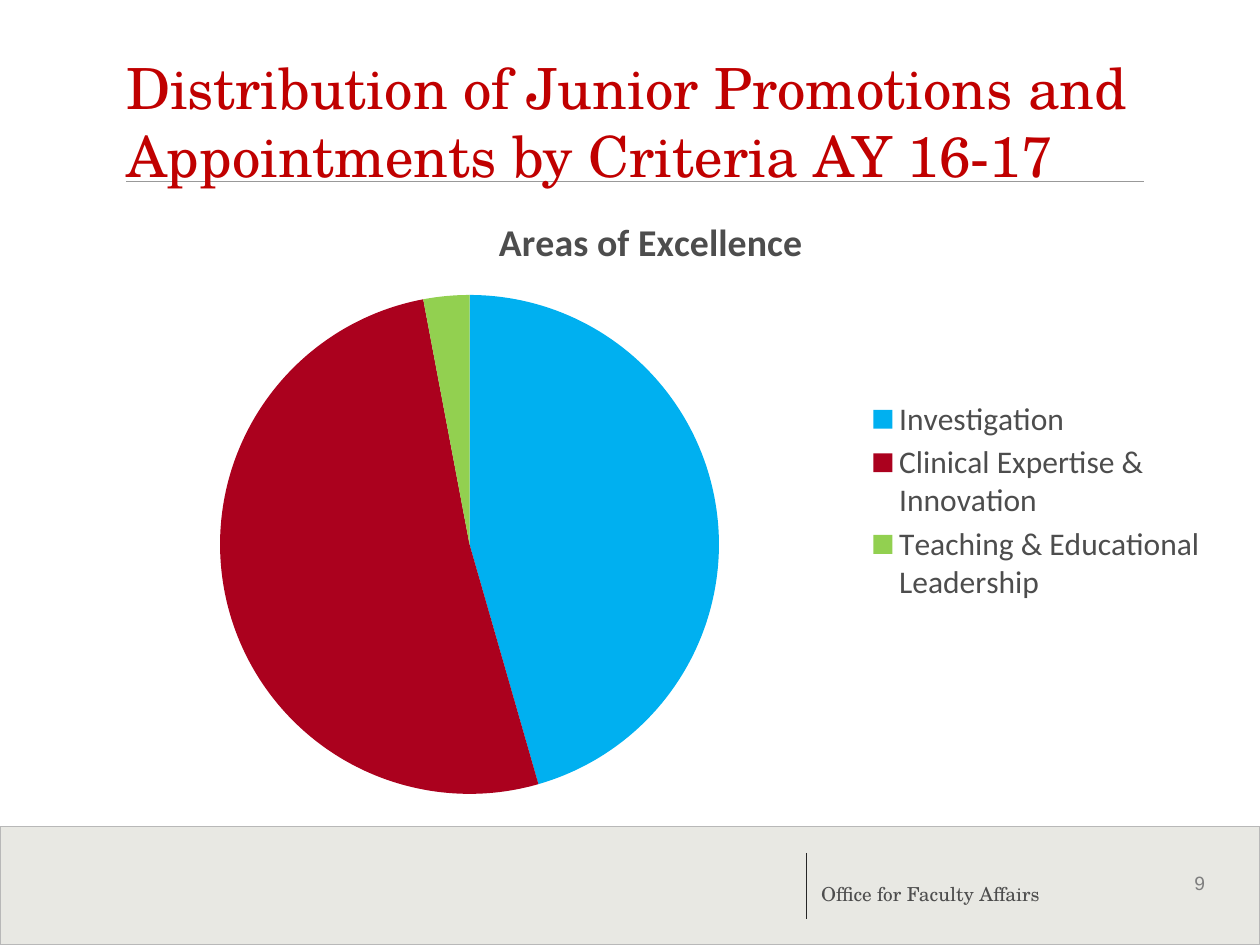
import pptx
import pptx.chart.data
import pptx.dml.color
import pptx.enum.chart
import pptx.enum.shapes
import pptx.enum.text
import pptx.oxml
import pptx.oxml.ns
import pptx.util

Pt = pptx.util.Pt
RGBColor = pptx.dml.color.RGBColor
Anchor = pptx.enum.text.MSO_ANCHOR

RED = RGBColor(0xC0, 0x00, 0x00)
TEXT_GRAY = RGBColor(0x4D, 0x4D, 0x4D)
NUMBER_GRAY = RGBColor(0x7F, 0x7F, 0x7F)
BAND_FILL = RGBColor(0xD3, 0xD3, 0xC9)
BAND_LINE = RGBColor(0xB8, 0xB8, 0xB8)
RULE_GRAY = RGBColor(0x99, 0x99, 0x99)
DIVIDER = RGBColor(0x26, 0x26, 0x26)

SERIF = "TeX Gyre Schola"
CHART_TITLE = "Areas of Excellence"
AREAS = [
    ("Investigation", 46, RGBColor(0x00, 0xB0, 0xF0)),
    ("Clinical Expertise & Innovation", 52, RGBColor(0xAB, 0x01, 0x1E)),
    ("Teaching & Educational Leadership", 3, RGBColor(0x92, 0xD0, 0x50)),
]


def set_attributes(target, values):
    for name, value in values.items():
        setattr(target, name, value)


def set_font(font, name, size, color, bold=False):
    set_attributes(font, {"name": name, "size": Pt(size), "bold": bold})
    font.color.rgb = color


def add_text(slide, text, box, font, frame_format):
    shape = slide.shapes.add_textbox(*map(Pt, box))
    set_attributes(shape.text_frame, {"word_wrap": True, **frame_format})
    paragraph = shape.text_frame.paragraphs[0]
    paragraph.text = text
    set_font(paragraph.font, *font)


def add_line(slide, start, end, color):
    line = slide.shapes.add_connector(
        pptx.enum.shapes.MSO_CONNECTOR.STRAIGHT, *map(Pt, start + end))
    line.line.color.rgb = color
    line.line.width = Pt(0.75)
    pptx.oxml.ns.qn("a:effectLst")
    line._element.spPr.append(
        pptx.oxml.parse_xml(f'<a:effectLst {pptx.oxml.ns.nsdecls("a")}/>'))


def add_footer_band(slide):
    band = slide.shapes.add_shape(
        pptx.enum.shapes.MSO_SHAPE.RECTANGLE, Pt(0), Pt(472.3), Pt(720), Pt(67.7))
    band.shadow.inherit = False
    band.fill.solid()
    band.fill.fore_color.rgb = BAND_FILL
    band.line.color.rgb = BAND_LINE
    band.line.width = Pt(0.75)
    color = band._element.spPr.find(".//" + pptx.oxml.ns.qn("a:srgbClr"))
    color.append(pptx.oxml.parse_xml(
        f'<a:alpha {pptx.oxml.ns.nsdecls("a")} val="50000"/>'))


def manual_layout(x, y, width, height, inner=False):
    """Chart layout element with lengths as fractions of the chart."""
    target = '<c:layoutTarget val="inner"/>' if inner else ""
    return pptx.oxml.parse_xml(
        f'<c:layout {pptx.oxml.ns.nsdecls("c")}><c:manualLayout>{target}'
        '<c:xMode val="edge"/><c:yMode val="edge"/>'
        f'<c:x val="{x}"/><c:y val="{y}"/><c:w val="{width}"/><c:h val="{height}"/>'
        '</c:manualLayout></c:layout>')


def place_in_chart(element, index, layout):
    for old in element.findall(pptx.oxml.ns.qn("c:layout")):
        element.remove(old)
    element.insert(index, layout)


def add_areas_pie(slide):
    data = pptx.chart.data.CategoryChartData()
    data.categories = [name for name, _, _ in AREAS]
    data.add_series(CHART_TITLE, [value for _, value, _ in AREAS])
    chart = slide.shapes.add_chart(
        pptx.enum.chart.XL_CHART_TYPE.PIE,
        Pt(48), Pt(108), Pt(648), Pt(356.4), data).chart
    set_font(chart.font, "Calibri", 18, TEXT_GRAY)

    chart.has_title = True
    paragraph = chart.chart_title.text_frame.paragraphs[0]
    paragraph.text = CHART_TITLE
    set_font(paragraph.runs[0].font, "Calibri", 21.6, TEXT_GRAY, bold=True)

    chart.has_legend = True
    set_attributes(chart.legend, {
        "position": pptx.enum.chart.XL_LEGEND_POSITION.RIGHT,
        "include_in_layout": False,
    })
    set_font(chart.legend.font, "Calibri", 18, TEXT_GRAY)

    plot = chart.plots[0]
    plot.vary_by_categories = True
    for index, (_, _, color) in enumerate(AREAS):
        fill = plot.series[0].points[index].format.fill
        fill.solid()
        fill.fore_color.rgb = color

    plot_area = chart._chartSpace.chart.plotArea
    place_in_chart(plot_area, 0, manual_layout(0.12, 0.17, 0.44, 0.8, inner=True))
    place_in_chart(chart.legend._element, 1, manual_layout(0.69, 0.33, 0.3, 0.34))


def main():
    presentation = pptx.Presentation()
    set_attributes(presentation, {"slide_width": Pt(720), "slide_height": Pt(540)})
    slide = presentation.slides.add_slide(presentation.slide_layouts[6])

    add_footer_band(slide)
    add_text(slide, "9", (675.4, 494.5, 36, 26.6), ("Arial", 11, NUMBER_GRAY), {})
    add_line(slide, (460.8, 487.4), (460.8, 524.9), DIVIDER)
    add_text(slide, "Office for Faculty Affairs", (462.2, 487.4, 201.6, 33.8),
             (SERIF, 11, TEXT_GRAY), {"vertical_anchor": Anchor.BOTTOM})
    add_line(slide, (72, 103.7), (653.8, 103.7), RULE_GRAY)
    add_text(slide,
             "Distribution of Junior Promotions and Appointments by Criteria AY 16-17",
             (72, 21.6, 581.8, 90), (SERIF, 32.4, RED),
             {"vertical_anchor": Anchor.BOTTOM, "margin_left": Pt(0)})
    add_areas_pie(slide)
    presentation.save("out.pptx")


if __name__ == "__main__":
    main()
